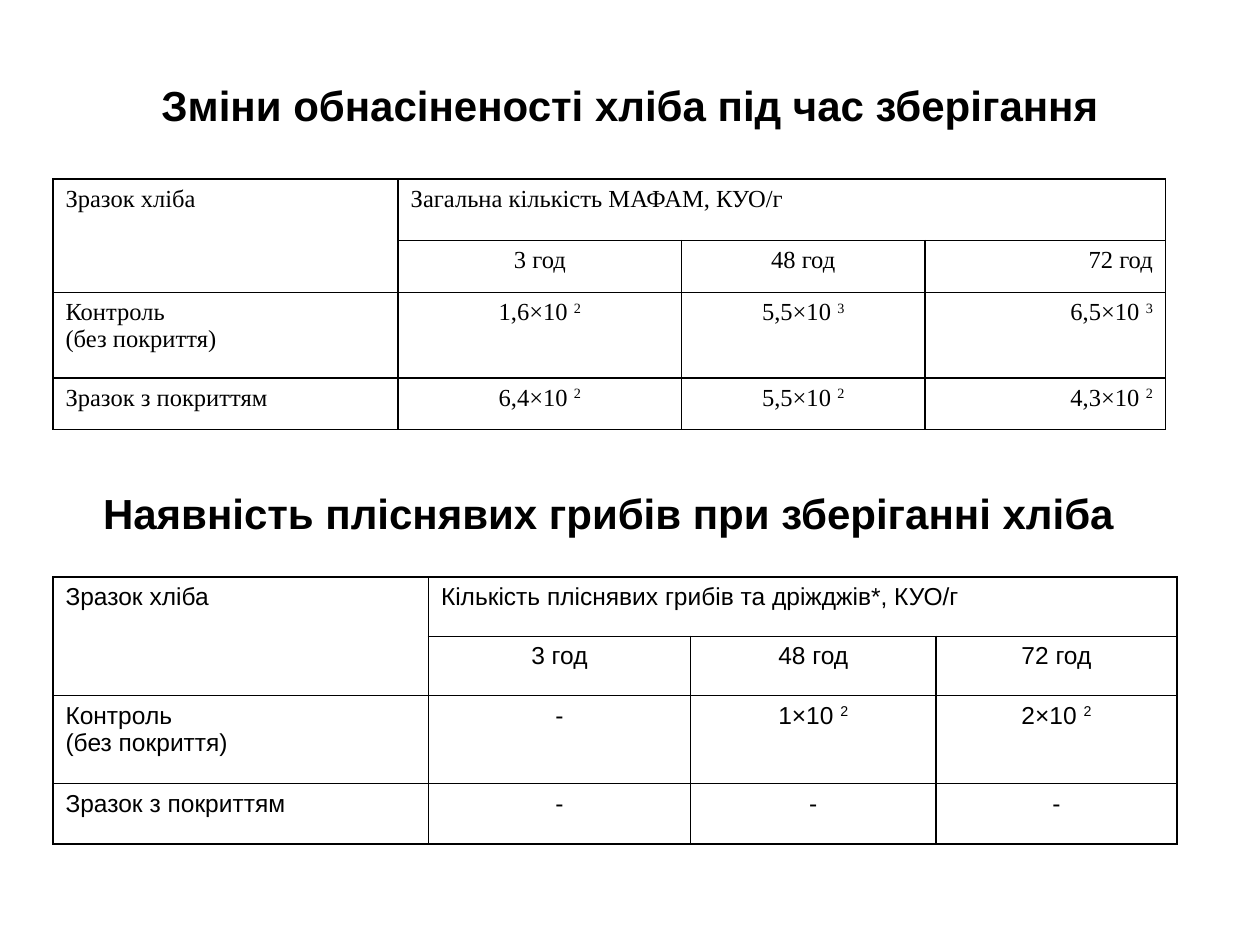
from lxml import etree
from pptx import Presentation
from pptx.dml.color import RGBColor
from pptx.enum.text import MSO_ANCHOR, PP_ALIGN
from pptx.oxml.ns import qn
from pptx.util import Inches, Pt

BLACK = RGBColor(0, 0, 0)
WHITE = RGBColor(255, 255, 255)
LEFT, CENTER, RIGHT = PP_ALIGN.LEFT, PP_ALIGN.CENTER, PP_ALIGN.RIGHT
MIDDLE = MSO_ANCHOR.MIDDLE
SANS, SERIF = "Arial", "Times New Roman"
TITLE_ONLY = 5


class SlideBuilder:
    heading_size = Pt(24)
    cell_size = Pt(14)
    border_width = Pt(1)

    def __init__(self, slide):
        self.slide = slide
        slide.background.fill.solid()
        slide.background.fill.fore_color.rgb = WHITE

    def style(self, paragraph, font_name, size, align, bold=False):
        paragraph.alignment = align
        font = paragraph.font
        font.name, font.size, font.bold = font_name, size, bold
        font.color.rgb = BLACK

    def heading(self, shape, text, left, top, width, height):
        shape.left, shape.top = Inches(left), Inches(top)
        shape.width, shape.height = Inches(width), Inches(height)
        frame = shape.text_frame
        frame.word_wrap = True
        frame.vertical_anchor = MIDDLE
        frame.text = text
        self.style(frame.paragraphs[0], SANS, self.heading_size, CENTER, True)
        return frame

    def title(self, text, *box):
        frame = self.heading(self.slide.shapes.title, text, *box)
        # The heading sits in the upper part of its box
        frame.margin_top, frame.margin_bottom = 0, Inches(0.33)

    def text_heading(self, text, *box):
        self.heading(self.slide.shapes.add_textbox(0, 0, 0, 0), text, *box)

    def borders(self, cell):
        properties = cell._tc.get_or_add_tcPr()
        for position, side in enumerate(("lnL", "lnR", "lnT", "lnB")):
            line = etree.Element(qn(f"a:{side}"), w=str(self.border_width))
            fill = etree.SubElement(line, qn("a:solidFill"))
            etree.SubElement(fill, qn("a:srgbClr"), val=str(BLACK))
            properties.insert(position, line)

    def cell(self, cell, text, font_name, align):
        """Fill a cell; text after ^ is superscript."""
        frame = cell.text_frame
        for index, line in enumerate(text.split("\n")):
            paragraph = frame.add_paragraph() if index else frame.paragraphs[0]
            self.style(paragraph, font_name, self.cell_size, align)
            base, _, power = line.partition("^")
            paragraph.add_run().text = base
            if power:
                exponent = paragraph.add_run()
                exponent.text = power
                exponent.font._element.set("baseline", "30000")

    def table(self, rows, left, top, widths, heights, font_name, aligns):
        table = self.slide.shapes.add_table(
            len(heights), len(widths), Inches(left), Inches(top),
            Inches(sum(widths)), Inches(sum(heights))).table
        table.first_row = table.horz_banding = False
        for column, width in zip(table.columns, widths):
            column.width = Inches(width)
        for row, height in zip(table.rows, heights):
            row.height = Inches(height)
        for cell in table.iter_cells():
            cell.fill.background()
            self.borders(cell)
        # Sample name spans both header rows, the measure spans all hours
        table.cell(0, 0).merge(table.cell(1, 0))
        table.cell(0, 1).merge(table.cell(0, len(widths) - 1))
        for r, row in enumerate(rows):
            for c, text in enumerate(row):
                if text:
                    self.cell(table.cell(r, c), text, font_name,
                              aligns[c] if r else LEFT)


def sample_rows(measure, control, coated):
    return [
        ["Зразок хліба", measure],
        [None, "3 год", "48 год", "72 год"],
        ["Контроль\n(без покриття)", *control],
        ["Зразок з покриттям", *coated],
    ]


def main():
    prs = Presentation()
    prs.slide_width, prs.slide_height = Inches(10), Inches(7.5)
    builder = SlideBuilder(
        prs.slides.add_slide(prs.slide_layouts[TITLE_ONLY]))

    # Mould section heading
    builder.title("Наявність пліснявих грибів при зберіганні хліба",
                  0.33, 3.92, 9, 0.62)

    # Total contamination
    builder.table(
        sample_rows("Загальна кількість МАФАМ, КУО/г",
                    ["1,6×10 ^2", "5,5×10 ^3", "6,5×10 ^3"],
                    ["6,4×10 ^2", "5,5×10 ^2", "4,3×10 ^2"]),
        0.42, 1.42, [2.74, 2.25, 1.93, 1.91], [0.49, 0.41, 0.68, 0.41],
        SERIF, [LEFT, CENTER, CENTER, RIGHT])
    builder.text_heading("Зміни обнасіненості хліба під час зберігання",
                         0.5, 0.5, 9, 0.67)

    # Mould and yeast counts
    builder.table(
        sample_rows("Кількість пліснявих грибів та дріжджів*, КУО/г",
                    ["-", "1×10 ^2", "2×10 ^2"], ["-"] * 3),
        0.42, 4.58, [2.98, 2.08, 1.95, 1.91], [0.47, 0.47, 0.7, 0.48],
        SANS, [LEFT, CENTER, CENTER, CENTER])

    prs.save("out.pptx")


if __name__ == "__main__":
    main()
